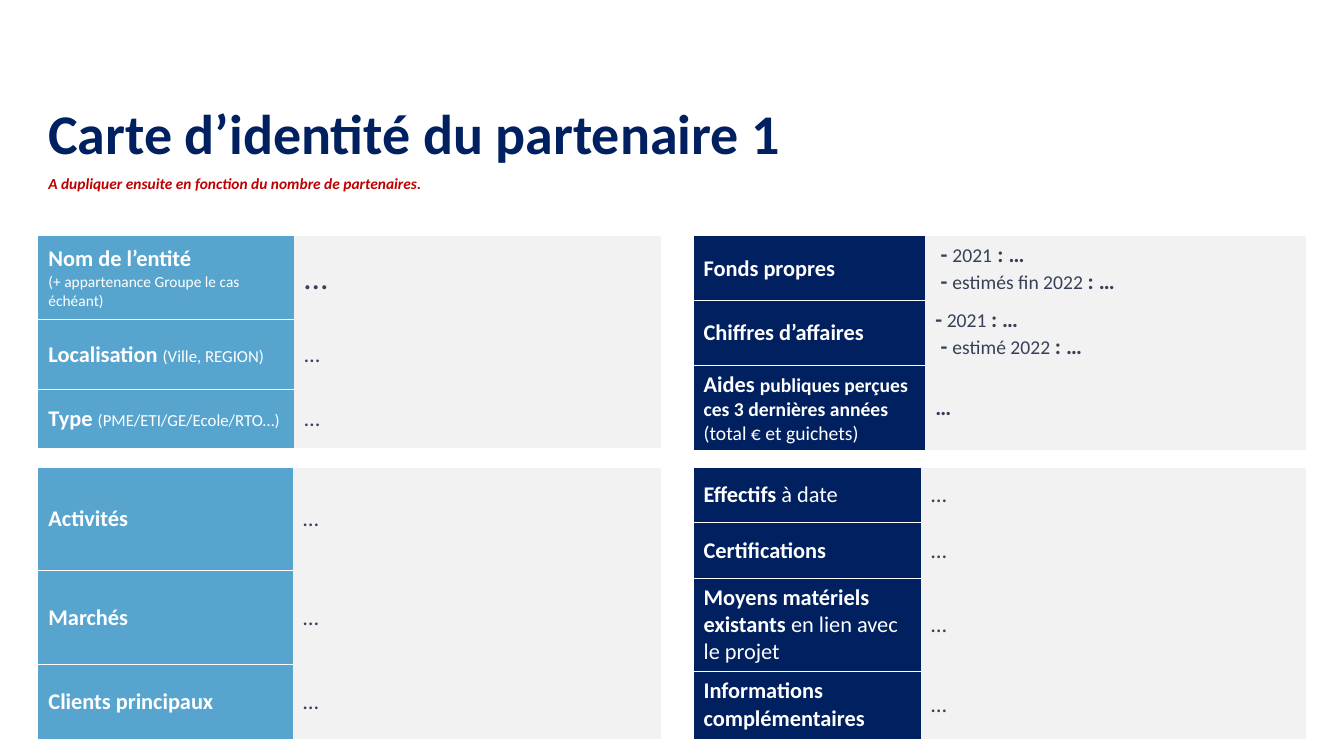
import pptx
import pptx.dml.color
import pptx.enum.text
import pptx.oxml
import pptx.oxml.ns
import pptx.util

Pt = pptx.util.Pt
MIDDLE = pptx.enum.text.MSO_ANCHOR.MIDDLE
TOP = pptx.enum.text.MSO_ANCHOR.TOP

FONT = "Calibri"
NAVY, BLUE, GREY = "002060", "57A5CF", "F2F2F2"
WHITE, SLATE, RED = "FFFFFF", "364157", "C00000"
NO_STYLE = "{2D5ABB26-0587-4C30-8999-92F81FD0307C}"

LEFT, RIGHT = 27.4, 495.4
UPPER, LOWER = 168.5, 334.1
DOTS = [[("…", 16, False)]]

TITLE = [[("Carte d’identité du partenaire 1", 40, True)]]
NOTE = [[("A dupliquer ensuite en fonction du nombre de partenaires.", 11, True)]]

TABLES = [
    (LEFT, UPPER, BLUE, (182.9, 262.1), [
        (59.8, [[("Nom de l’entité", 16, True)],
                [("(+ appartenance Groupe le cas échéant)", 11, False)]],
         [[("…", 24, False)]]),
        (49.7, [[("Localisation ", 16, True), ("(Ville, REGION)", 12, False)]], DOTS),
        (41.8, [[("Type ", 16, True), ("(PME/ETI/GE/Ecole/RTO…)", 12, False)]], DOTS),
    ]),
    (RIGHT, LOWER, NAVY, (162.4, 275.4), [
        (38.9, [[("Effectifs ", 16, True), ("à date", 16, False)]], DOTS),
        (40.3, [[("Certifications", 16, True)]], DOTS),
        (66.2, [[("Moyens matériels existants ", 16, True),
                 ("en lien avec le projet", 16, False)]], DOTS),
        (48.2, [[("Informations complémentaires", 16, True)]], DOTS),
    ]),
    (LEFT, LOWER, BLUE, (182, 263), [
        (73.4, [[("Activités", 16, True)]], DOTS),
        (67.4, [[("Marchés", 16, True)]], DOTS),
        (53.3, [[("Clients principaux", 16, True)]], DOTS),
    ]),
    (RIGHT, UPPER, NAVY, (165.6, 272.2), [
        (46.4, [[("Fonds propres", 16, True)]],
         [[(" - ", 16, True), ("2021", 14, False), (" : …", 16, True)],
          [(" - ", 16, True), ("estimés fin 2022 ", 14, False), (": …", 16, True)]]),
        (46.4, [[("Chiffres d’affaires", 16, True)]],
         [[("-", 16, True), (" ", 14, True), ("2021 ", 14, False), (": …", 16, True)],
          [(" - ", 16, True), ("estimé 2022 ", 14, False), (": …", 16, True)]]),
        (60.2, [[("Aides ", 16, True),
                 ("publiques perçues ces 3 dernières années ", 14, True),
                 ("(total € et guichets)", 14, False)]],
         [[("…", 16, True)]]),
    ]),
]


def rgb(value):
    return pptx.dml.color.RGBColor.from_string(value)


def write(frame, lines, color, italic=False):
    for index, line in enumerate(lines):
        para = frame.add_paragraph() if index else frame.paragraphs[0]
        for text, size, bold in line:
            span = para.add_run()
            span.text = text
            span.font.name = FONT
            span.font.size = Pt(size)
            span.font.bold = bold
            span.font.italic = italic
            span.font.color.rgb = rgb(color)


def add_text(page, bounds, lines, color, anchor, italic=False):
    frame = page.shapes.add_textbox(*map(Pt, bounds)).text_frame
    frame.word_wrap = True
    frame.vertical_anchor = anchor
    write(frame, lines, color, italic)
    return frame


def fill_cell(cell, lines, text_color, fill_color):
    cell.vertical_anchor = MIDDLE
    write(cell.text_frame, lines, text_color)
    cell.fill.solid()
    cell.fill.fore_color.rgb = rgb(fill_color)


def add_border(cell, side):
    namespace = pptx.oxml.ns.nsdecls("a")
    line = pptx.oxml.parse_xml(
        f'<a:{side} {namespace} w="{Pt(1)}"><a:solidFill>'
        f'<a:srgbClr val="{WHITE}"/></a:solidFill></a:{side}>')
    properties = cell._tc.get_or_add_tcPr()
    properties.insert(len(properties) - 1, line)


def add_card(page, left, top, label_color, widths, rows):
    height = sum(row[0] for row in rows)
    frame = page.shapes.add_table(
        len(rows), 2, Pt(left), Pt(top), Pt(sum(widths)), Pt(height))
    table = frame.table
    table.first_row = False
    table.horz_banding = False
    table._tbl.tblPr.find(pptx.oxml.ns.qn("a:tableStyleId")).text = NO_STYLE
    for column, width in zip(table.columns, widths):
        column.width = Pt(width)
    for index, (row_height, label, value) in enumerate(rows):
        table.rows[index].height = Pt(row_height)
        label_cell = table.cell(index, 0)
        fill_cell(label_cell, label, WHITE, label_color)
        fill_cell(table.cell(index, 1), value, SLATE, GREY)
        if index > 0:
            add_border(label_cell, "lnT")
        if index < len(rows) - 1:
            add_border(label_cell, "lnB")


def main():
    deck = pptx.Presentation()
    deck.slide_width, deck.slide_height = Pt(960), Pt(540)
    page = deck.slides.add_slide(deck.slide_layouts[6])
    title = add_text(page, (LEFT, 64.8, 686, 65.5), TITLE, NAVY, MIDDLE)
    title.paragraphs[0].line_spacing = 0.9
    for card in TABLES:
        add_card(page, *card)
    add_text(page, (LEFT, 121, 561, 20.6), NOTE, RED, TOP, italic=True)
    deck.save("out.pptx")


if __name__ == "__main__":
    main()
